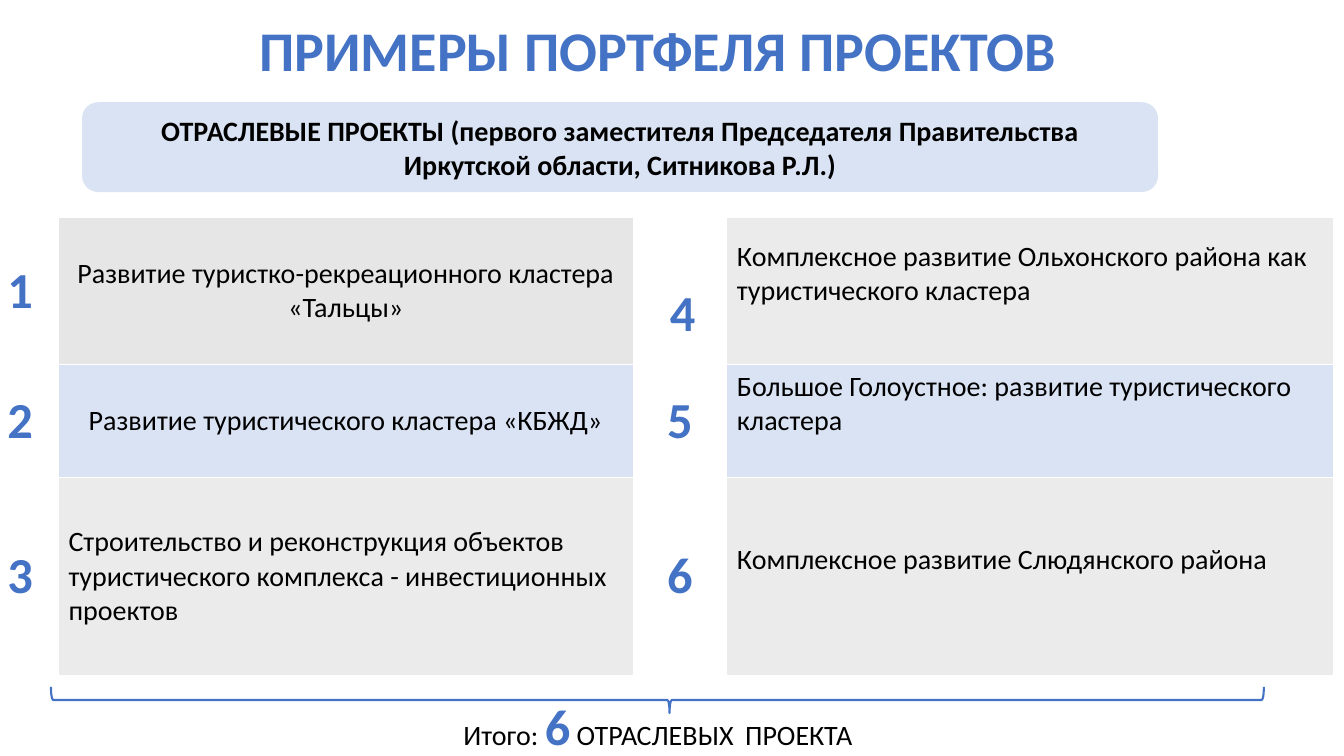
from pptx import Presentation
from pptx.dml.color import RGBColor
from pptx.enum.shapes import MSO_SHAPE as Shape
from pptx.enum.text import MSO_ANCHOR as Anchor, PP_ALIGN as Align
from pptx.oxml import parse_xml
from pptx.oxml.ns import nsdecls
from pptx.util import Inches, Pt

BLUE = RGBColor(0x44, 0x72, 0xC4)
PALE = RGBColor(0xDA, 0xE3, 0xF3)
GRAY = RGBColor(0xE7, 0xE6, 0xE6)
LIGHT = RGBColor(0xEB, 0xEB, 0xEB)
BLACK = RGBColor(0, 0, 0)
WHITE = RGBColor(0xFF, 0xFF, 0xFF)

BODY = (20, BLACK, False)
LEAD = (20, BLACK, True)
NUM = (36, BLUE, True)
TITLE = (40, BLUE, True)

COLS = [0.76, 3.69, 2.01, 0.93, 4.17, 1.85]
ROWS = [0.72, 1.46, 1.12, 1.96]
LEFT = [
    ("1", "Развитие туристко-рекреационного кластера «Тальцы»", GRAY, Align.CENTER),
    ("2", "Развитие туристического кластера «КБЖД»", PALE, Align.CENTER),
    ("3", "Строительство и реконструкция объектов туристического комплекса"
          " - инвестиционных проектов", LIGHT, Align.LEFT),
]
RIGHT = [
    ("", "Комплексное развитие Ольхонского района как туристического кластера", LIGHT),
    ("5", "Большое Голоустное: развитие туристического кластера", PALE),
    ("6", "Комплексное развитие Слюдянского района", LIGHT),
]


class Deck:
    """Hold the style and the current slide of the deck."""

    font = "Calibri"

    def __init__(self):
        self.prs = Presentation()
        self.prs.slide_width = Inches(13.33)
        self.prs.slide_height = Inches(7.5)
        self.slide = self.prs.slides.add_slide(self.prs.slide_layouts[6])

    def style(self, run, look):
        size, color, bold = look
        run.font.name = self.font
        run.font.size = Pt(size)
        run.font.bold = bold
        run.font.color.rgb = color

    def label(self, frame, parts, align=Align.CENTER):
        para = frame.paragraphs[0]
        para.alignment = align
        for words, look in parts:
            run = para.add_run()
            run.text = words
            self.style(run, look)

    def text(self, box, parts, anchor=Anchor.TOP, wrap=True):
        frame = self.slide.shapes.add_textbox(*map(Inches, box)).text_frame
        frame.word_wrap = wrap
        frame.vertical_anchor = anchor
        self.label(frame, parts)

    def shape(self, kind, box, line, width, fill=None):
        item = self.slide.shapes.add_shape(kind, *map(Inches, box))
        item.shadow.inherit = False
        item.line.color.rgb = line
        item.line.width = Pt(width)
        if fill is None:
            item.fill.background()
        else:
            item.fill.solid()
            item.fill.fore_color.rgb = fill
        return item

    def table(self, left, top, cols, rows):
        frame = self.slide.shapes.add_table(
            len(rows), len(cols), Inches(left), Inches(top),
            Inches(sum(cols)), Inches(sum(rows)))
        grid = frame.table
        grid.first_row = grid.horz_banding = False
        for col, width in zip(grid.columns, cols):
            col.width = Inches(width)
        for row, height in zip(grid.rows, rows):
            row.height = Inches(height)
        for cell in grid.iter_cells():
            self.edge(cell)
            cell.fill.background()
        return grid

    def edge(self, cell):
        props = cell._tc.get_or_add_tcPr()
        for side in "LRTB":
            props.append(parse_xml(
                f'<a:ln{side} {nsdecls("a")} w="{Pt(1)}"><a:solidFill>'
                f'<a:srgbClr val="{WHITE}"/></a:solidFill></a:ln{side}>'))

    def cell(self, cell, words, look, align=Align.CENTER, fill=None, foot=0.05):
        cell.vertical_anchor = Anchor.MIDDLE
        cell.margin_bottom = Inches(foot)
        if fill is not None:
            cell.fill.solid()
            cell.fill.fore_color.rgb = fill
        if words:
            self.label(cell.text_frame, [(words, look)], align)

    def entry(self, grid, row, col, num, words, fill, align, foot=0.05):
        self.cell(grid.cell(row, col), num, NUM)
        main = grid.cell(row, col + 1)
        main.merge(grid.cell(row, col + 2))
        self.cell(main, words, BODY, align, fill, foot)


def main():
    deck = Deck()
    grid = deck.table(-0.18, 1.44, COLS, ROWS)
    for row, (num, words, fill, align) in enumerate(LEFT, 1):
        deck.entry(grid, row, 0, num, words, fill, align)
    for row, (num, words, fill) in enumerate(RIGHT, 1):
        deck.entry(grid, row, 3, num, words, fill, Align.LEFT, 0.39)

    lead = deck.shape(Shape.ROUNDED_RECTANGLE, (0.83, 1.03, 10.64, 0.86),
                      PALE, 2.25, PALE)
    deck.label(lead.text_frame, [(
        "ОТРАСЛЕВЫЕ ПРОЕКТЫ (первого заместителя Председателя Правительства"
        " Иркутской области, Ситникова Р.Л.)", LEAD)])
    deck.text((1.85, 0.1, 9.35, 0.77), [("ПРИМЕРЫ ПОРТФЕЛЯ ПРОЕКТОВ", TITLE)],
              Anchor.MIDDLE)

    brace = deck.shape(Shape.RIGHT_BRACE, (6.39, 0.93, 0.26, 12.03), BLUE, 1.5)
    brace.rotation = 90
    brace.adjustments[0] = 0.08
    brace.adjustments[1] = 0.49
    deck.text((1.98, 6.85, 9.09, 0.71), [
        ("Итого: ", BODY), ("6", NUM), (" ОТРАСЛЕВЫХ", BODY),
        (" ", NUM), ("ПРОЕКТА", BODY)])
    deck.text((6.52, 2.74, 0.5, 0.71), [("4", NUM)], wrap=False)
    deck.prs.save("out.pptx")


if __name__ == "__main__":
    main()
